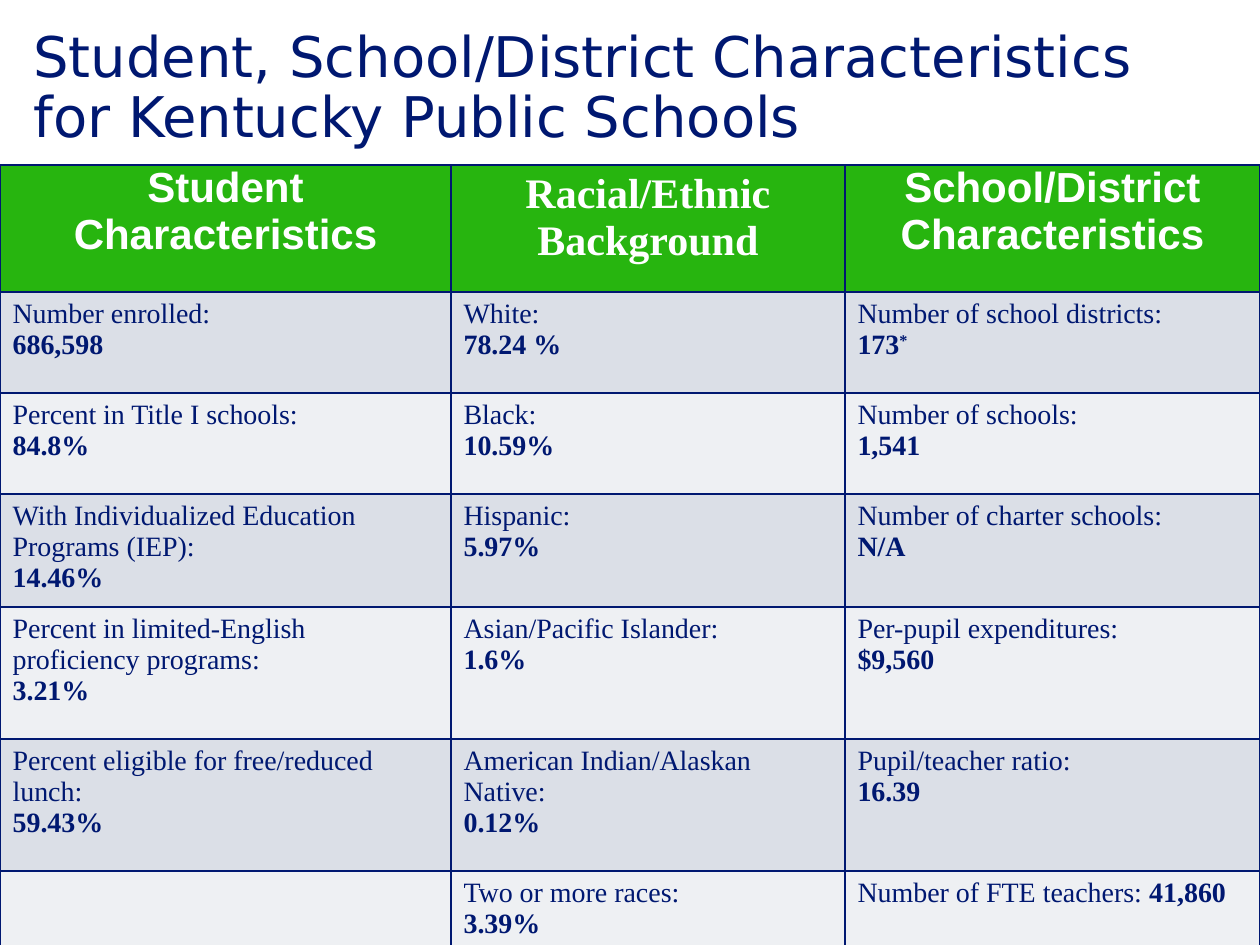
from dataclasses import dataclass

from lxml.etree import SubElement
from pptx import Presentation
from pptx.dml.color import RGBColor
from pptx.enum.text import MSO_ANCHOR, PP_ALIGN
from pptx.oxml.ns import qn
from pptx.util import Emu, Pt

NAVY = RGBColor(0x00, 0x18, 0x71)
GREEN = RGBColor(0x27, 0xB5, 0x0F)
WHITE = RGBColor(0xFF, 0xFF, 0xFF)
BANDS = (RGBColor(0xDB, 0xDF, 0xE7), RGBColor(0xEE, 0xF0, 0xF3))
SERIF = "Times New Roman"


@dataclass
class Header:
    text: str
    font: str
    padded: bool = False


@dataclass
class Fact:
    label: str
    value: str
    note: str = ""
    inline: bool = False


HEADERS = [
    Header("Student Characteristics", "Arial"),
    Header("Racial/Ethnic Background", SERIF, padded=True),
    Header("School/District Characteristics", "Arial"),
]
FACTS = [
    [Fact("Number enrolled:", "686,598"),
     Fact("White:", "78.24 %"),
     Fact("Number of school districts:", "173", note="*")],
    [Fact("Percent in Title I schools:", "84.8%"),
     Fact("Black:", "10.59%"),
     Fact("Number of schools:", "1,541")],
    [Fact("With Individualized Education Programs (IEP):", "14.46%"),
     Fact("Hispanic:", "5.97%"),
     Fact("Number of charter schools:", "N/A")],
    [Fact("Percent in limited-English proficiency programs:", "3.21%"),
     Fact("Asian/Pacific Islander:", "1.6%"),
     Fact("Per-pupil expenditures:", "$9,560")],
    [Fact("Percent eligible for free/reduced lunch:", "59.43%"),
     Fact("American Indian/Alaskan Native:", "0.12%"),
     Fact("Pupil/teacher ratio:", "16.39")],
    [None,
     Fact("Two or more races:", "3.39%"),
     Fact("Number of FTE teachers: ", "41,860", inline=True)],
]
COL_WIDTHS = (451, 394, 415)
ROW_HEIGHTS = (127, 101, 101, 113, 132, 132, 86)


def px(n: int) -> Emu:
    return Emu(n * 914400 // 126)


def style(r, font: str, size: int, color: RGBColor, bold: bool = False) -> None:
    r.font.name, r.font.size, r.font.bold = font, Pt(size), bold
    r.font.color.rgb = color


def add_run(p, text: str, bold: bool = False):
    r = p.add_run()
    r.text = text
    style(r, SERIF, 16, NAVY, bold)
    return r


def paint_cell(cell, fill: RGBColor) -> None:
    """Border all four sides, then fill."""
    tc_pr = cell._tc.get_or_add_tcPr()
    for side in ("lnL", "lnR", "lnT", "lnB"):
        ln = SubElement(tc_pr, qn(f"a:{side}"), w=str(Pt(1)))
        SubElement(SubElement(ln, qn("a:solidFill")), qn("a:srgbClr"), val=str(NAVY))
    cell.fill.solid()
    cell.fill.fore_color.rgb = fill


def draw_header(cell, header: Header) -> None:
    paint_cell(cell, GREEN)
    if not header.padded:
        cell.margin_left = cell.margin_right = cell.margin_top = cell.margin_bottom = 0
    cell.text_frame.text = header.text
    p = cell.text_frame.paragraphs[0]
    p.alignment = PP_ALIGN.CENTER
    style(p.runs[0], header.font, 24, WHITE, bold=True)


def draw_fact(cell, fact: Fact | None, fill: RGBColor) -> None:
    paint_cell(cell, fill)
    if fact is None:
        return
    tf = cell.text_frame
    p = tf.paragraphs[0]
    add_run(p, fact.label)
    if not fact.inline:
        p = tf.add_paragraph()
    add_run(p, fact.value, bold=True)
    if fact.note:
        r = add_run(p, fact.note, bold=True)
        r.font._element.set("baseline", "30000")


def draw_table(s) -> None:
    frame = s.shapes.add_table(len(ROW_HEIGHTS), len(COL_WIDTHS), 0, px(165),
                               px(sum(COL_WIDTHS)), px(sum(ROW_HEIGHTS)))
    table = frame.table
    for column, width in zip(table.columns, COL_WIDTHS):
        column.width = px(width)
    for row, height in zip(table.rows, ROW_HEIGHTS):
        row.height = px(height)
    for col, header in enumerate(HEADERS):
        draw_header(table.cell(0, col), header)
    for i, facts in enumerate(FACTS):
        for col, fact in enumerate(facts):
            draw_fact(table.cell(i + 1, col), fact, BANDS[i % 2])


def draw_title(s) -> None:
    tf = s.shapes.add_textbox(px(21), 0, px(1187), px(179)).text_frame
    tf.word_wrap = True
    tf.vertical_anchor = MSO_ANCHOR.MIDDLE
    tf.text = "Student, School/District Characteristics for Kentucky Public Schools"
    p = tf.paragraphs[0]
    p.line_spacing = 0.9
    style(p.runs[0], "DejaVu Sans", 32, NAVY)


def main() -> None:
    prs = Presentation()
    prs.slide_width, prs.slide_height = px(1260), px(945)
    s = prs.slides.add_slide(prs.slide_layouts[6])
    draw_table(s)
    draw_title(s)
    prs.save("out.pptx")


if __name__ == "__main__":
    main()
